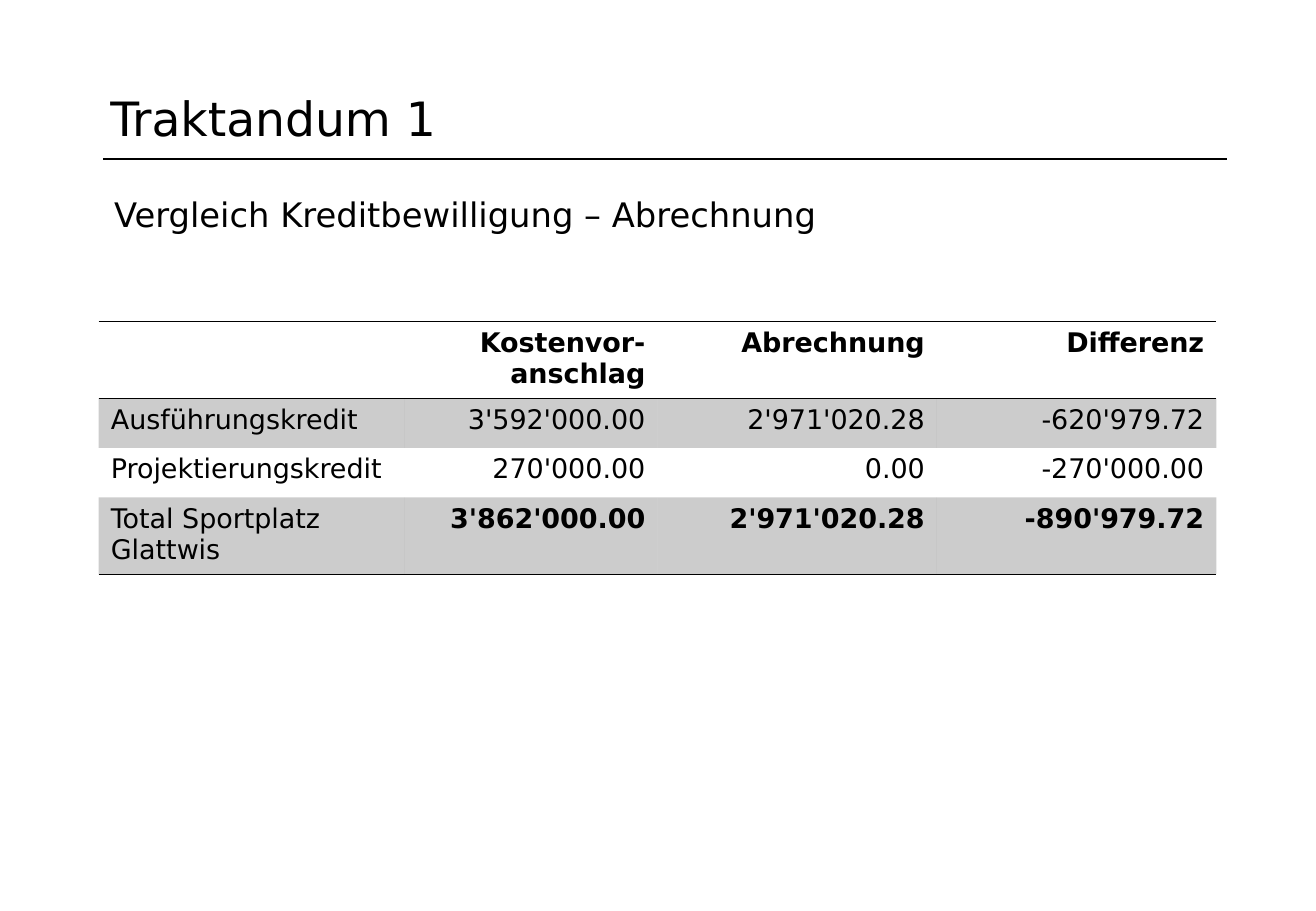
from dataclasses import dataclass

from lxml.etree import SubElement
from pptx import Presentation
from pptx.dml.color import RGBColor
from pptx.enum.shapes import MSO_CONNECTOR
from pptx.enum.text import MSO_ANCHOR, PP_ALIGN
from pptx.oxml.ns import qn
from pptx.slide import Slide
from pptx.table import _Cell as Cell
from pptx.text.text import Font
from pptx.util import Pt

FONT_NAME = "DejaVu Sans"
BLACK = RGBColor(0, 0, 0)
SHADE_OPACITY = 20  # percent
NO_GRID_STYLE = "{2D5ABB26-0587-4C30-8999-92F81FD0307C}"


@dataclass
class Heading:
    text: str
    left: float
    top: float
    width: float
    height: float
    size: float
    anchor: MSO_ANCHOR


@dataclass
class CreditRow:
    label: str
    amounts: tuple[str, str, str]
    bold: bool = False
    shaded: bool = False
    borders: tuple[str, ...] = ()


HEADINGS = [
    Heading("Traktandum 1", 58.3, 49, 457, 41.8, 28, MSO_ANCHOR.MIDDLE),
    Heading("Vergleich Kreditbewilligung – Abrechnung", 60.5, 111.6, 684.7, 31.7, 20, MSO_ANCHOR.TOP),
]
CREDIT_ROWS = [
    CreditRow("", ("Kostenvor-anschlag", "Abrechnung", "Differenz"), bold=True, borders=("lnT", "lnB")),
    CreditRow("Ausführungskredit", ("3'592'000.00", "2'971'020.28", "-620'979.72"), shaded=True),
    CreditRow("Projektierungskredit", ("270'000.00", "0.00", "-270'000.00")),
    CreditRow("Total Sportplatz Glattwis", ("3'862'000.00", "2'971'020.28", "-890'979.72"),
              bold=True, shaded=True, borders=("lnB",)),
]
COLUMN_WIDTHS = (181.5, 149.8, 165.6, 165.6)
ROW_HEIGHT = 29.3


def style_font(font: Font, size: float, bold: bool = False) -> None:
    font.name = FONT_NAME
    font.size = Pt(size)
    font.bold = bold
    font.color.rgb = BLACK


def add_heading(slide: Slide, heading: Heading) -> None:
    box = slide.shapes.add_textbox(Pt(heading.left), Pt(heading.top), Pt(heading.width), Pt(heading.height))
    text_frame = box.text_frame
    text_frame.word_wrap = True
    text_frame.vertical_anchor = heading.anchor
    text_frame.text = heading.text
    style_font(text_frame.paragraphs[0].runs[0].font, heading.size)


def add_rule(slide: Slide) -> None:
    rule = slide.shapes.add_connector(MSO_CONNECTOR.STRAIGHT, Pt(61.2), Pt(94.3), Pt(727.2), Pt(94.3))
    rule.line.color.rgb = BLACK
    rule.line.width = Pt(0.75)
    SubElement(rule._element.spPr, qn("a:effectLst"))


def add_border(cell: Cell, side: str) -> None:
    border = SubElement(cell._tc.get_or_add_tcPr(), qn(f"a:{side}"), w=str(Pt(1)))
    fill = SubElement(border, qn("a:solidFill"))
    SubElement(fill, qn("a:srgbClr"), val=str(BLACK))


def fill_cell(cell: Cell, text: str, row: CreditRow, is_amount: bool) -> None:
    cell.text_frame.text = text
    paragraph = cell.text_frame.paragraphs[0]
    paragraph.alignment = PP_ALIGN.RIGHT if is_amount else PP_ALIGN.LEFT
    if paragraph.runs:
        style_font(paragraph.runs[0].font, 16, row.bold and is_amount)
    else:
        paragraph.font.size = Pt(16)
    for side in row.borders:
        add_border(cell, side)
    if row.shaded:
        cell.fill.solid()
        cell.fill.fore_color.rgb = BLACK
        color = cell._tc.tcPr.find(f".//{qn('a:solidFill')}[last()]/..").findall(qn("a:solidFill"))[-1][0] \
            if not row.borders else cell._tc.tcPr.find(qn("a:solidFill"))[0]
        SubElement(color, qn("a:alpha"), val=str(SHADE_OPACITY * 1000))
    else:
        cell.fill.background()


def add_credit_table(slide: Slide) -> None:
    frame = slide.shapes.add_table(len(CREDIT_ROWS), len(COLUMN_WIDTHS), Pt(58.5), Pt(190.6),
                                   Pt(sum(COLUMN_WIDTHS)), Pt(ROW_HEIGHT * len(CREDIT_ROWS)))
    table = frame.table
    table.first_row = table.horz_banding = False
    table._tbl.tblPr.find(qn("a:tableStyleId")).text = NO_GRID_STYLE
    for column, width in zip(table.columns, COLUMN_WIDTHS):
        column.width = Pt(width)
    for table_row, row in zip(table.rows, CREDIT_ROWS):
        table_row.height = Pt(ROW_HEIGHT)
        for index, text in enumerate((row.label, *row.amounts)):
            fill_cell(table_row.cells[index], text, row, is_amount=index > 0)


def main() -> None:
    presentation = Presentation()
    presentation.slide_width = Pt(780)
    presentation.slide_height = Pt(540)
    slide = presentation.slides.add_slide(presentation.slide_layouts[6])

    # Title, rule and subtitle
    add_rule(slide)
    for heading in HEADINGS:
        add_heading(slide, heading)

    # Credit comparison
    add_credit_table(slide)

    presentation.save("out.pptx")


if __name__ == "__main__":
    main()
